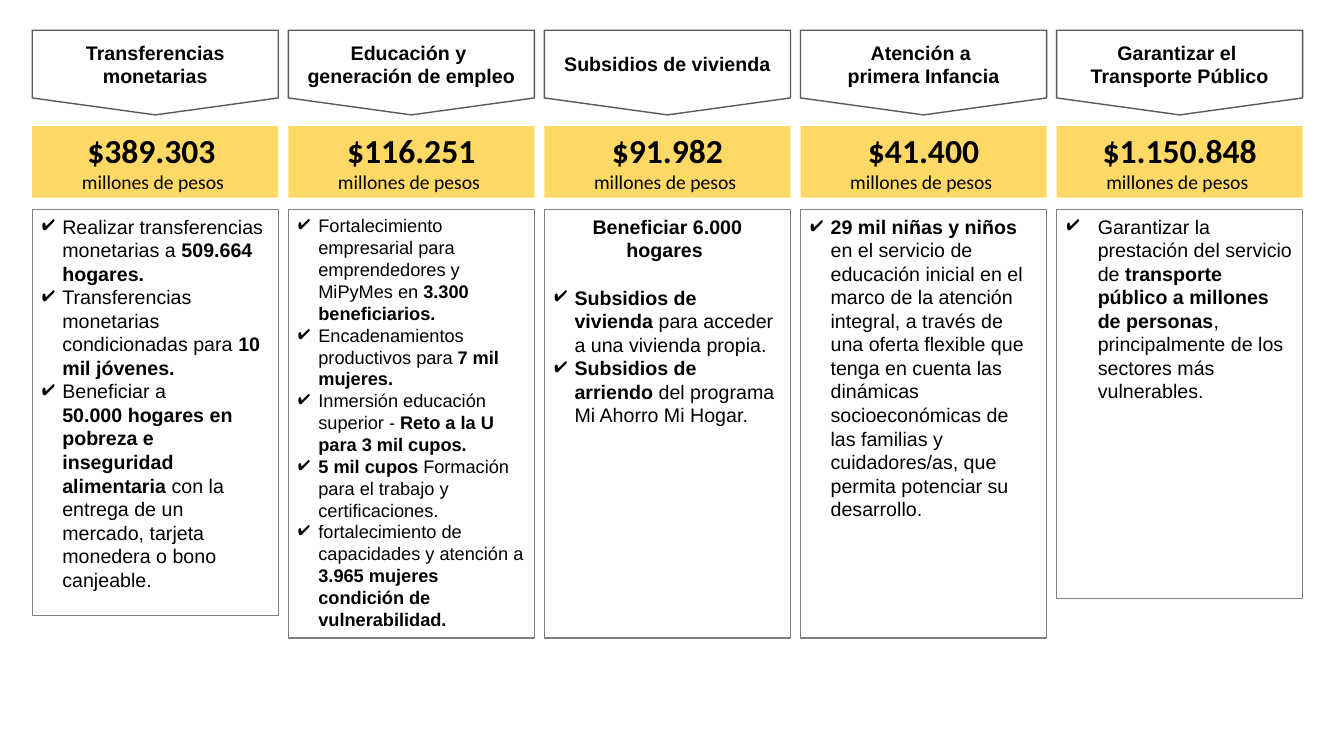
import copy
from dataclasses import dataclass

import pptx
import pptx.dml.color
import pptx.enum.shapes
import pptx.enum.text
import pptx.oxml.ns
import pptx.util
from lxml import etree
from pptx.shapes.autoshape import Shape
from pptx.slide import Slide
from pptx.text.text import TextFrame

PX = 9144  # 100 px to the inch
RGB = pptx.dml.color.RGBColor
BLACK = RGB(0x00, 0x00, 0x00)
WHITE = RGB(0xFF, 0xFF, 0xFF)
YELLOW = RGB(0xFF, 0xD9, 0x66)
DARK_GREY = RGB(0x59, 0x59, 0x59)
GREY = RGB(0x7F, 0x7F, 0x7F)

KIND = pptx.enum.shapes.MSO_SHAPE
ANCHOR = pptx.enum.text.MSO_ANCHOR
ALIGN = pptx.enum.text.PP_ALIGN

LEFT, PITCH, WIDTH = 32, 254, 244
HEAD_TOP, HEAD_H = 30, 84
AMOUNT_TOP, AMOUNT_H = 125, 71
BODY_TOP = 208

TITLE = {"name": "Arial", "size": pptx.util.Pt(14)}
AMOUNT = {"name": "Calibri", "size": pptx.util.Pt(24)}
UNIT = {"name": "Calibri", "size": pptx.util.Pt(14)}


@dataclass
class Column:
    title: str
    amount: str
    body_h: int
    bullets: list[str]  # ** switches bold on and off
    size: int = 14
    indent: int = 20
    lead: str = ""


COLUMNS = [
    Column("Transferencias monetarias", "$389.303 ", 403, [
        "Realizar transferencias monetarias a **509.664 hogares.**",
        "Transferencias monetarias condicionadas para **10 mil jóvenes.**",
        "Beneficiar a \n**50.000 hogares en pobreza e inseguridad alimentaria **"
        "con la entrega de un mercado, tarjeta monedera o bono canjeable.",
    ]),
    Column("Educación y \ngeneración de empleo", "$116.251", 425, [
        "Fortalecimiento empresarial para emprendedores y MiPyMes en "
        "**3.300 beneficiarios.**",
        "Encadenamientos productivos para **7 mil mujeres.**",
        "Inmersión educación superior - **Reto a la U para 3 mil cupos.**",
        "**5 mil cupos **Formación para el trabajo y certificaciones.",
        "fortalecimiento de capacidades y atención a "
        "**3.965 mujeres condición de vulnerabilidad.**",
    ], size=13),
    Column("Subsidios de vivienda", "$91.982", 425, [
        "**Subsidios de vivienda **para acceder a una vivienda propia.",
        "**Subsidios de arriendo **del programa Mi Ahorro Mi Hogar.",
    ], lead="Beneficiar 6.000 hogares "),
    Column("Atención a \nprimera Infancia", "$41.400", 425, [
        "**29 mil niñas y niños **en el servicio de educación inicial en el marco "
        "de la atención integral, a través de una oferta flexible que tenga en "
        "cuenta las dinámicas socioeconómicas de las familias y cuidadores/as, "
        "que permita potenciar su desarrollo.",
    ]),
    Column("Garantizar el \nTransporte Público", "$1.150.848", 386, [
        "Garantizar la prestación del servicio de **transporte público a millones "
        "de personas**, principalmente de los sectores más vulnerables.",
    ], indent=31),
]


def add_box(s: Slide, kind: KIND, x: int, y: int, h: int, fill: RGB,
            line: RGB | None, anchor: ANCHOR) -> Shape:
    sp = s.shapes.add_shape(kind, x * PX, y * PX, WIDTH * PX, h * PX)
    sp.shadow.inherit = False
    sp.fill.solid()
    sp.fill.fore_color.rgb = fill
    if line is None:
        sp.line.fill.background()
    else:
        sp.line.color.rgb = line
        sp.line.width = pptx.util.Pt(1)
    sp.text_frame.word_wrap = True
    sp.text_frame.vertical_anchor = anchor
    return sp


def add_text(tf: TextFrame, text: str, fmt: dict, indent: int = 0,
             space_before: int = 0) -> None:
    """Add a centred paragraph, or a ticked one when it has an indent."""
    p = tf.paragraphs[0] if not tf.text else tf.add_paragraph()
    p.alignment = ALIGN.LEFT if indent else ALIGN.CENTER
    if space_before:
        p.space_before = pptx.util.Pt(space_before)
    if indent:
        pPr = p._p.get_or_add_pPr()
        pPr.set("marL", str(indent * PX))
        pPr.set("indent", str(-indent * PX))
        qn = pptx.oxml.ns.qn
        clr = etree.SubElement(pPr, qn("a:buClr"))
        etree.SubElement(clr, qn("a:srgbClr"), val=str(BLACK))
        etree.SubElement(pPr, qn("a:buChar"), char="✔")
    for i, part in enumerate(text.split("**")):
        for j, piece in enumerate(part.split("\n")):
            if j:
                p.add_line_break()
                p._p[-1].append(copy.deepcopy(r._r.rPr))
            if piece:
                r = p.add_run()
                r.text = piece
                r.font.color.rgb = BLACK
                for key, value in {**fmt, "bold": i % 2 == 1}.items():
                    setattr(r.font, key, value)


def draw_column(s: Slide, x: int, col: Column) -> None:
    # Heading
    sp = add_box(s, KIND.FLOWCHART_OFFPAGE_CONNECTOR, x, HEAD_TOP, HEAD_H,
                 WHITE, DARK_GREY, ANCHOR.MIDDLE)
    add_text(sp.text_frame, f"**{col.title.replace(chr(10), '**' + chr(10) + '**')}**", TITLE)

    # Amount
    sp = add_box(s, KIND.RECTANGLE, x, AMOUNT_TOP, AMOUNT_H, YELLOW, None, ANCHOR.MIDDLE)
    add_text(sp.text_frame, f"**{col.amount}**", AMOUNT)
    add_text(sp.text_frame, "millones de pesos ", UNIT)

    # Actions
    sp = add_box(s, KIND.RECTANGLE, x, BODY_TOP, col.body_h, WHITE, GREY, ANCHOR.TOP)
    fmt = {"name": "Arial", "size": pptx.util.Pt(col.size)}
    if col.lead:
        add_text(sp.text_frame, f"**{col.lead}**", fmt)
    for i, bullet in enumerate(col.bullets):
        add_text(sp.text_frame, bullet, fmt, col.indent, 17 if col.lead and i == 0 else 0)


def main() -> None:
    prs = pptx.Presentation()
    prs.slide_width, prs.slide_height = 1333 * PX, 750 * PX
    s = prs.slides.add_slide(prs.slide_layouts[6])
    for i, col in enumerate(COLUMNS):
        draw_column(s, LEFT + i * PITCH, col)
    prs.save("out.pptx")


if __name__ == "__main__":
    main()
